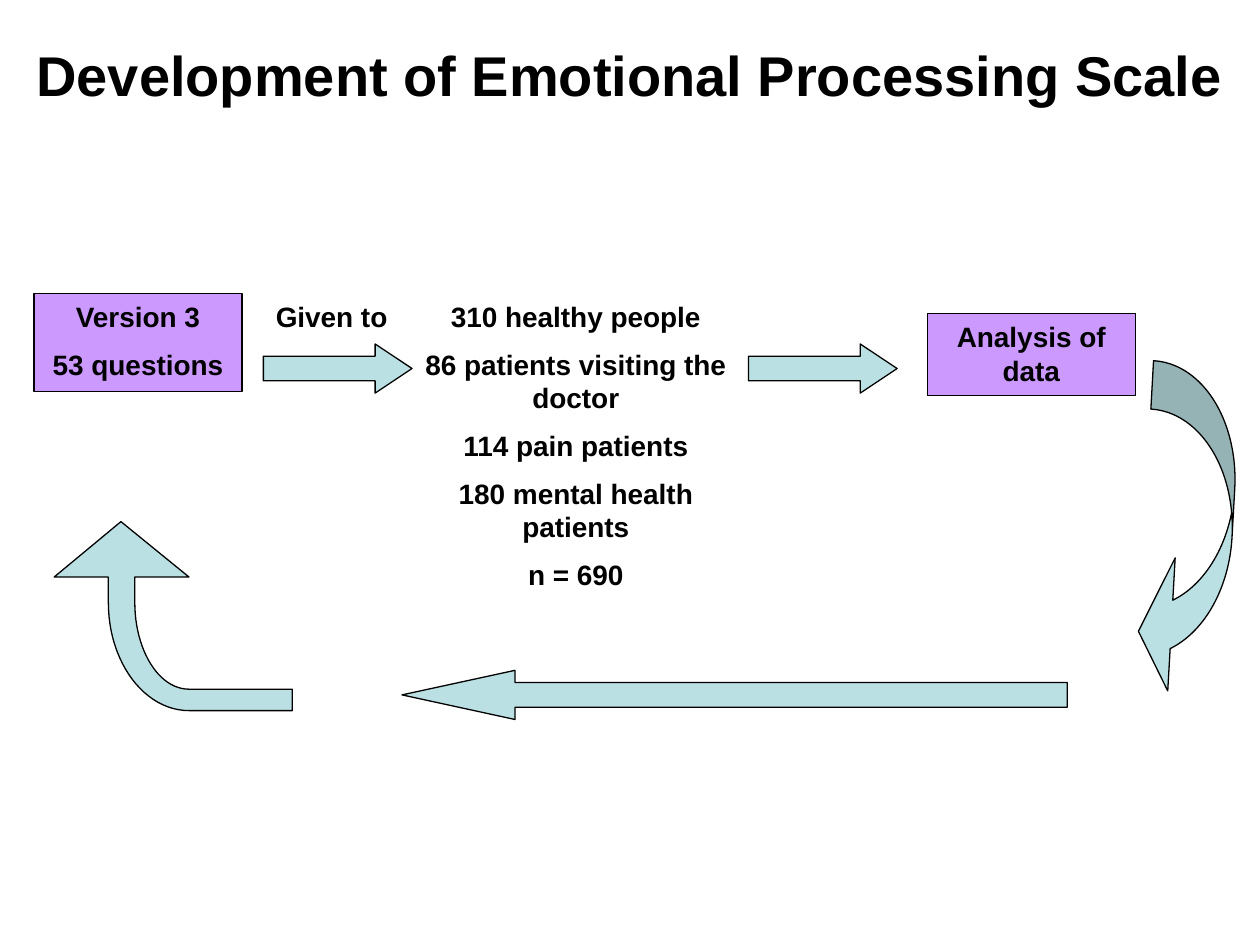
from dataclasses import dataclass
from pptx import Presentation
from pptx.dml.color import RGBColor
from pptx.enum.shapes import MSO_SHAPE
from pptx.enum.text import MSO_ANCHOR, PP_ALIGN
from pptx.util import Inches, Pt

RECTANGLE = MSO_SHAPE.RECTANGLE
RIGHT_ARROW = MSO_SHAPE.RIGHT_ARROW
LEFT_ARROW = MSO_SHAPE.LEFT_ARROW
CURVED_LEFT_ARROW = MSO_SHAPE.CURVED_LEFT_ARROW
TOP, MIDDLE = MSO_ANCHOR.TOP, MSO_ANCHOR.MIDDLE
LEFT, CENTER = PP_ALIGN.LEFT, PP_ALIGN.CENTER


@dataclass(frozen=True)
class Theme:
    font: str = "Arial"
    ink: RGBColor = RGBColor(0, 0, 0)
    box: RGBColor = RGBColor(0xCC, 0x99, 0xFF)
    arrow: RGBColor = RGBColor(0xBB, 0xE0, 0xE3)
    title_size: Pt = Pt(32)
    text_size: Pt = Pt(16)
    space_before: Pt = Pt(8)
    line_width: Pt = Pt(0.75)


theme = Theme()


def write_text(shape, lines, size, alignment, anchor, space_before):
    frame = shape.text_frame
    frame.text = "\n".join(lines)
    frame_format = {
        "word_wrap": True,
        "vertical_anchor": anchor,
        "margin_left": Inches(0.1),
        "margin_right": Inches(0.1),
        "margin_top": Inches(0.05),
        "margin_bottom": Inches(0.05),
    }
    for name, value in frame_format.items():
        setattr(frame, name, value)
    font_format = {"name": theme.font, "size": size, "bold": True}
    for paragraph in frame.paragraphs:
        paragraph.alignment = alignment
        paragraph.space_before = space_before
        for run in paragraph.runs:
            for name, value in font_format.items():
                setattr(run.font, name, value)
            run.font.color.rgb = theme.ink


def paint(shape, color):
    shape.shadow.inherit = False
    shape.fill.solid()
    shape.fill.fore_color.rgb = color
    shape.line.color.rgb = theme.ink
    shape.line.width = theme.line_width


presentation = Presentation()
presentation.slide_width = Inches(10)
presentation.slide_height = Inches(7.5)
slide = presentation.slides.add_slide(presentation.slide_layouts[5])

title = slide.shapes.title
title_place = {"left": 0, "top": 0.28, "width": 10, "height": 0.61}
for name, value in title_place.items():
    setattr(title, name, Inches(value))
write_text(title, ["Development of Emotional Processing Scale"],
           theme.title_size, CENTER, MIDDLE, Pt(0))

boxes = [
    ((0.27, 2.33, 1.65, 0.78), ["Version 3", "53 questions"]),
    ((7.36, 2.49, 1.65, 0.65), ["Analysis of data"]),
]
for place, lines in boxes:
    box = slide.shapes.add_shape(RECTANGLE, *map(Inches, place))
    paint(box, theme.box)
    write_text(box, lines, theme.text_size, CENTER, TOP, theme.space_before)

arrows = [
    (RIGHT_ARROW, (2.09, 2.73, 1.18, 0.39), (0.5, 0.75), 0),
    (RIGHT_ARROW, (5.94, 2.73, 1.18, 0.39), (0.5, 0.75), 0),
    (CURVED_LEFT_ARROW, (9.08, 2.88, 0.7, 2.68), (0.55, 1.51, 0.37), 3.2),
    (LEFT_ARROW, (3.19, 5.32, 5.28, 0.39), (0.5, 2.3), 0),
]
for kind, place, adjustments, rotation in arrows:
    arrow = slide.shapes.add_shape(kind, *map(Inches, place))
    for index, value in enumerate(adjustments):
        arrow.adjustments[index] = value
    arrow.rotation = rotation
    paint(arrow, theme.arrow)

curve_steps = 24
outer_curve = [(0.86, 4.78), (0.86, 5.26), (1.15, 5.64), (1.5, 5.64)]
inner_curve = [(1.5, 5.47), (1.26, 5.47), (1.07, 5.16), (1.07, 4.78)]
bends = []
for curve in (outer_curve, inner_curve):
    bend = []
    for step in range(curve_steps + 1):
        t = step / curve_steps
        weights = ((1 - t) ** 3, 3 * t * (1 - t) ** 2, 3 * t ** 2 * (1 - t), t ** 3)
        bend.append(tuple(sum(weight * point[axis] for weight, point in zip(weights, curve))
                          for axis in (0, 1)))
    bends.append(bend)

outline = [(0.96, 4.14), (0.43, 4.58), (0.86, 4.58), *bends[0],
           (2.32, 5.64), (2.32, 5.47), *bends[1], (1.07, 4.58), (1.5, 4.58)]
outline = [(Inches(x), Inches(y)) for x, y in outline]
builder = slide.shapes.build_freeform(*outline[0])
builder.add_line_segments(outline[1:], close=True)
paint(builder.convert_to_shape(), theme.arrow)

labels = [
    ((3.19, 2.33, 2.76, 2.51), CENTER,
     ["310 healthy people", "86 patients visiting the doctor", "114 pain patients",
      "180 mental health patients", "n = 690"]),
    ((2.09, 2.33, 1.18, 0.37), LEFT, ["Given to"]),
]
for place, alignment, lines in labels:
    label = slide.shapes.add_textbox(*map(Inches, place))
    write_text(label, lines, theme.text_size, alignment, TOP, theme.space_before)

presentation.save("out.pptx")
